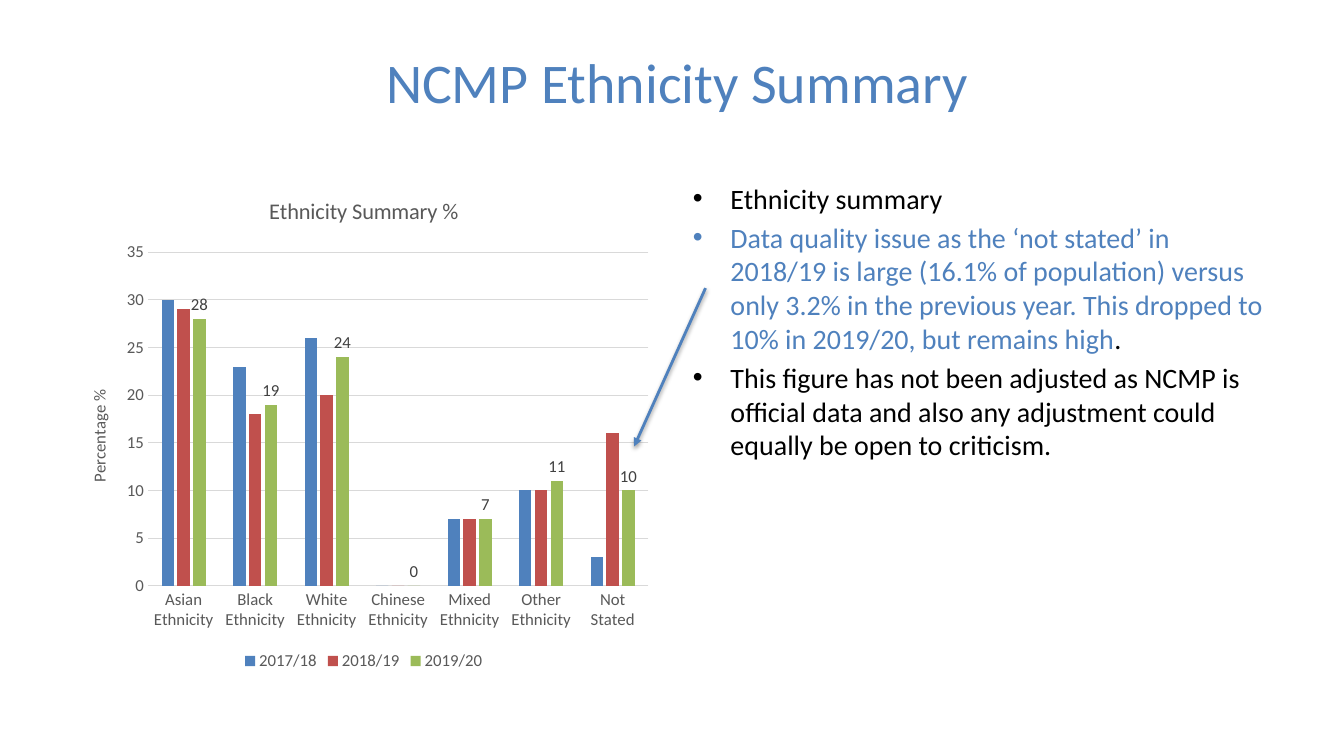
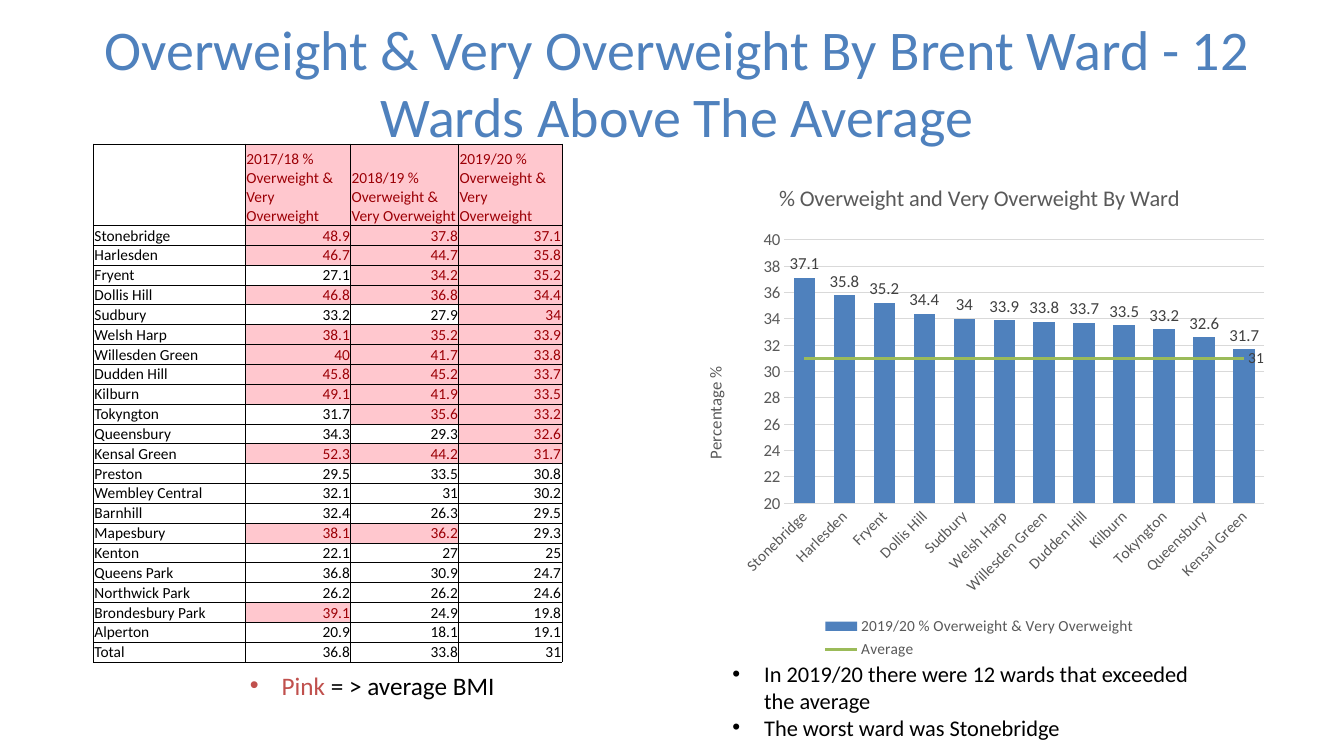
import dataclasses

import pptx
import pptx.chart.data
import pptx.dml.color
import pptx.enum.chart
import pptx.enum.shapes
import pptx.enum.text
import pptx.oxml
import pptx.oxml.ns
import pptx.util

Cm = pptx.util.Cm
Pt = pptx.util.Pt


@dataclasses.dataclass(frozen=True)
class Theme:
    font: str = "Calibri"
    blue: str = "4F81BD"
    red: str = "C0504D"
    green: str = "9BBB59"
    black: str = "000000"
    grey: str = "595959"
    dark: str = "404040"
    pale: str = "D9D9D9"
    pink: str = "FFC7CE"
    wine: str = "9C0006"
    title: int = 40
    body: int = 20
    note: int = 18
    point: int = 16
    label: int = 12
    small: int = 11


@dataclasses.dataclass(frozen=True)
class Box:
    """A region of the slide, in centimetres."""
    left: float
    top: float
    width: float
    height: float

    def place(self):
        return [Cm(n) for n in (self.left, self.top, self.width, self.height)]


THEME = Theme()
TITLE = Box(0.79, 0.46, 32.54, 3.18)
LEFT = Box(1.69, 4.44, 14.95, 12.57)
RIGHT = Box(17.21, 4.44, 14.95, 12.57)

GROUPS = ["Asian Ethnicity", "Black Ethnicity", "White Ethnicity", "Chinese Ethnicity",
          "Mixed Ethnicity", "Other Ethnicity", "Not Stated"]
SHARES = {
    "2017/18": [30, 23, 26, 0, 7, 10, 3],
    "2018/19": [29, 18, 20, 0, 7, 10, 16],
    "2019/20": [28, 19, 24, 0, 7, 11, 10],
}
YEARS = list(SHARES)
MEASURE = "% Overweight & Very Overweight"
WARDS = [
    ("Stonebridge", 48.9, 37.8, 37.1),
    ("Harlesden", 46.7, 44.7, 35.8),
    ("Fryent", 27.1, 34.2, 35.2),
    ("Dollis Hill", 46.8, 36.8, 34.4),
    ("Sudbury", 33.2, 27.9, 34),
    ("Welsh Harp", 38.1, 35.2, 33.9),
    ("Willesden Green", 40, 41.7, 33.8),
    ("Dudden Hill", 45.8, 45.2, 33.7),
    ("Kilburn", 49.1, 41.9, 33.5),
    ("Tokyngton", 31.7, 35.6, 33.2),
    ("Queensbury", 34.3, 29.3, 32.6),
    ("Kensal Green", 52.3, 44.2, 31.7),
    ("Preston", 29.5, 33.5, 30.8),
    ("Wembley Central", 32.1, 31, 30.2),
    ("Barnhill", 32.4, 26.3, 29.5),
    ("Mapesbury", 38.1, 36.2, 29.3),
    ("Kenton", 22.1, 27, 25),
    ("Queens Park", 36.8, 30.9, 24.7),
    ("Northwick Park", 26.2, 26.2, 24.6),
    ("Brondesbury Park", 39.1, 24.9, 19.8),
    ("Alperton", 20.9, 18.1, 19.1),
]
TOTAL = ("Total", 36.8, 33.8, 31)


def shade(code):
    return pptx.dml.color.RGBColor.from_string(code)


def style(font, size, code):
    font.name = THEME.font
    font.size = Pt(size)
    font.bold = False
    font.color.rgb = shade(code)


def add_xml(parent, text):
    """Append an element of the drawing namespace."""
    space = pptx.oxml.ns.nsdecls("a")
    parent.append(pptx.oxml.parse_xml(text.replace(" ", f" {space} ", 1)))


def add_page(deck, text):
    page = deck.slides.add_slide(deck.slide_layouts[5])
    head = page.shapes.title
    head.left, head.top, head.width, head.height = TITLE.place()
    frame = head.text_frame
    frame.text = text
    frame.word_wrap = True
    frame.auto_size = pptx.enum.text.MSO_AUTO_SIZE.NONE
    frame.vertical_anchor = pptx.enum.text.MSO_ANCHOR.MIDDLE
    para = frame.paragraphs[0]
    para.alignment = pptx.enum.text.PP_ALIGN.CENTER
    style(para.runs[0].font, THEME.title, THEME.blue)
    return page


def add_list(page, box, items, size, indent, gap=0, wrap=True):
    """Place bullets; each item is a list of (text, colour) runs."""
    frame = page.shapes.add_textbox(*box.place()).text_frame
    frame.word_wrap = wrap
    if not wrap:
        frame.auto_size = pptx.enum.text.MSO_AUTO_SIZE.SHAPE_TO_FIT_TEXT
    for index, item in enumerate(items):
        para = frame.add_paragraph() if index else frame.paragraphs[0]
        props = para._p.get_or_add_pPr()
        props.set("marL", str(Cm(indent)))
        props.set("indent", str(-Cm(indent)))
        add_xml(props, '<a:buFont typeface="Arial"/>')
        add_xml(props, '<a:buChar char="•"/>')
        para.space_before = Pt(gap if index else 0)
        for text, code in item:
            run = para.add_run()
            run.text = text
            style(run.font, size, code)


def style_axis(axis, size):
    axis.major_tick_mark = axis.minor_tick_mark = pptx.enum.chart.XL_TICK_MARK.NONE
    style(axis.tick_labels.font, size, THEME.grey)


def set_title(owner, text, size):
    """Title a chart or an axis."""
    owner.has_title = True
    title = owner.chart_title if hasattr(owner, "chart_title") else owner.axis_title
    title.text_frame.text = text
    style(title.text_frame.paragraphs[0].runs[0].font, size, THEME.grey)


def add_bars(page, box, title, names, series, scale, gap, overlap, small):
    """Place a column chart; scale is (low, high, step)."""
    data = pptx.chart.data.CategoryChartData()
    data.categories = names
    for name, values in series.items():
        data.add_series(name, values)
    kind = pptx.enum.chart.XL_CHART_TYPE.COLUMN_CLUSTERED
    chart = page.shapes.add_chart(kind, *box.place(), data).chart
    style(chart.font, 10, THEME.black)
    set_title(chart, title, THEME.point)
    chart.chart_title.include_in_layout = False

    across, up = chart.category_axis, chart.value_axis
    style_axis(across, small)
    style_axis(up, THEME.label)
    up.minimum_scale, up.maximum_scale, up.major_unit = scale
    up.tick_labels.number_format = "0"
    up.tick_labels.number_format_is_linked = False
    up.format.line.fill.background()
    for line in (across.format.line, up.major_gridlines.format.line):
        line.color.rgb = shade(THEME.pale)
        line.width = Pt(0.75)
    set_title(up, "Percentage %", THEME.label)
    chart.element.xpath(".//c:valAx/c:title//a:bodyPr")[0].set("rot", "-5400000")

    chart.has_legend = True
    chart.legend.position = pptx.enum.chart.XL_LEGEND_POSITION.BOTTOM
    chart.legend.include_in_layout = False
    style(chart.legend.font, small, THEME.grey)

    plot = chart.plots[0]
    plot.gap_width, plot.overlap = gap, overlap
    plot.vary_by_categories = False
    for bars, code in zip(plot.series, (THEME.blue, THEME.red, THEME.green)):
        bars.format.fill.solid()
        bars.format.fill.fore_color.rgb = shade(code)
    return chart


def add_labels(bars, form):
    labels = bars.data_labels
    labels.show_value = True
    labels.number_format = form
    labels.number_format_is_linked = False
    labels.position = pptx.enum.chart.XL_LABEL_POSITION.OUTSIDE_END
    style(labels.font, THEME.label, THEME.dark)


def last_to_line(chart):
    """Draw the last column series as a line, labelled at its end."""
    bars = chart.element.xpath(".//c:barChart")[0]
    row = bars.xpath("c:ser")[-1]
    for flag in row.xpath("c:invertIfNegative | c:spPr"):
        row.remove(flag)
    axes = "".join(f'<c:axId val="{n}"/>' for n in bars.xpath("c:axId/@val"))
    line = pptx.oxml.parse_xml(
        f'<c:lineChart {pptx.oxml.ns.nsdecls("c")}><c:grouping val="standard"/>'
        f'<c:varyColors val="0"/><c:marker val="1"/>{axes}</c:lineChart>')
    line.insert(2, row)
    bars.addnext(line)
    trace = chart.plots[1].series[0]
    trace.smooth = False
    trace.marker.style = pptx.enum.chart.XL_MARKER_STYLE.NONE
    trace.format.line.color.rgb = shade(THEME.green)
    trace.format.line.width = Pt(2.25)
    trace.data_labels.show_value = False
    label = trace.points[len(trace.values) - 1].data_label
    style(label.font, THEME.small, THEME.dark)
    label.position = pptx.enum.chart.XL_LABEL_POSITION.RIGHT


def add_arrow(page, start, end):
    kind = pptx.enum.shapes.MSO_CONNECTOR.STRAIGHT
    arrow = page.shapes.add_connector(kind, *[Cm(n) for n in start + end])
    arrow.line.color.rgb = shade(THEME.blue)
    arrow.line.width = Pt(2)
    add_xml(arrow.line._get_or_add_ln(), '<a:tailEnd type="triangle"/>')
    add_xml(arrow._element.spPr,
            '<a:effectLst ><a:outerShdw blurRad="40000" dist="20000" dir="5400000" '
            'rotWithShape="0"><a:srgbClr val="000000"><a:alpha val="38000"/>'
            '</a:srgbClr></a:outerShdw></a:effectLst>')


def fill_cell(cell, text, hot, right):
    cell.margin_left = cell.margin_right = cell.margin_top = Cm(0.02)
    cell.margin_bottom = 0
    cell.vertical_anchor = pptx.enum.text.MSO_ANCHOR.BOTTOM
    props = cell._tc.get_or_add_tcPr()
    for side in ("lnL", "lnR", "lnT", "lnB"):
        add_xml(props, f'<a:{side} w="6350"><a:solidFill><a:srgbClr val="{THEME.black}"/>'
                       f'</a:solidFill></a:{side}>')
    if hot:
        cell.fill.solid()
        cell.fill.fore_color.rgb = shade(THEME.pink)
    else:
        cell.fill.background()
    if text:
        cell.text_frame.text = text
        para = cell.text_frame.paragraphs[0]
        if right:
            para.alignment = pptx.enum.text.PP_ALIGN.RIGHT
        style(para.runs[0].font, THEME.small, THEME.wine if hot else THEME.black)


def add_wards(page, box):
    """Place the ward table; a value above its year's total turns pink."""
    head = ("", *(f"{year} {MEASURE}" for year in YEARS))
    rows = [head, *WARDS, TOTAL]
    table = page.shapes.add_table(len(rows), len(head), *box.place()).table
    table.first_row = table.horz_banding = False
    for column, width in zip(table.columns, (3.83, 2.65, 2.72, 2.6)):
        column.width = Cm(width)
    step = 0.5
    for r, row in enumerate(rows):
        table.rows[r].height = Cm(step if r else box.height - step * (len(rows) - 1))
        for c, value in enumerate(row):
            hot = c > 0 and (r == 0 or value > TOTAL[c])
            fill_cell(table.cell(r, c), str(value), hot, r > 0 and c > 0)


def build_groups(deck):
    page = add_page(deck, "NCMP Ethnicity Summary")
    chart = add_bars(page, LEFT, "Ethnicity Summary %", GROUPS, SHARES, (0, 35, 5),
                     219, -27, THEME.label)
    add_labels(chart.plots[0].series[-1], "#,##0")
    issue = ("Data quality issue as the ‘not stated’ in 2018/19 is large (16.1% of "
             "population) versus only 3.2% in the previous year. This dropped to 10% "
             "in 2019/20, but remains high")
    caveat = ("This figure has not been adjusted as NCMP is official data and also any "
              "adjustment could equally be open to criticism.")
    add_list(page, RIGHT, [[("Ethnicity summary", THEME.black)],
                           [(issue, THEME.blue), (".", THEME.black)],
                           [(caveat, THEME.black)]], THEME.body, 0.95, gap=4)
    add_arrow(page, (RIGHT.left + 0.57, RIGHT.top + 2.82),
              (LEFT.left + LEFT.width - 0.66, LEFT.top + 6.81))


def build_wards(deck):
    page = add_page(deck, "Overweight & Very Overweight By Brent Ward - 12 Wards Above The Average")
    above = [ward for ward in WARDS if ward[-1] > TOTAL[-1]]
    series = {f"{YEARS[-1]} {MEASURE}": [ward[-1] for ward in above],
              "Average": [TOTAL[-1]] * len(above)}
    chart = add_bars(page, dataclasses.replace(RIGHT, top=4.13),
                     "% Overweight and Very Overweight By Ward",
                     [ward[0] for ward in above], series, (20, 40, 2), 85, 1, THEME.small)
    chart.element.xpath(".//c:catAx/c:txPr/a:bodyPr")[0].set("rot", "-2700000")
    add_labels(chart.plots[0].series[0], "General")
    last_to_line(chart)
    add_list(page, Box(6.05, 16.76, 6.73, 1.02),
             [[("Pink", THEME.red), (" = > average BMI", THEME.black)]],
             THEME.note, 0.8, wrap=False)
    points = ("In 2019/20 there were 12 wards that exceeded the average",
              "The worst ward was Stonebridge")
    add_list(page, Box(18.21, 16.51, 12.32, 2.31),
             [[(text, THEME.black)] for text in points], THEME.point, 0.8)
    add_wards(page, Box(2.36, 3.63, 11.8, 13.05))


def main():
    deck = pptx.Presentation()
    deck.slide_width, deck.slide_height = Cm(33.87), Cm(19.05)
    build_groups(deck)
    build_wards(deck)
    deck.save("out.pptx")


if __name__ == "__main__":
    main()
